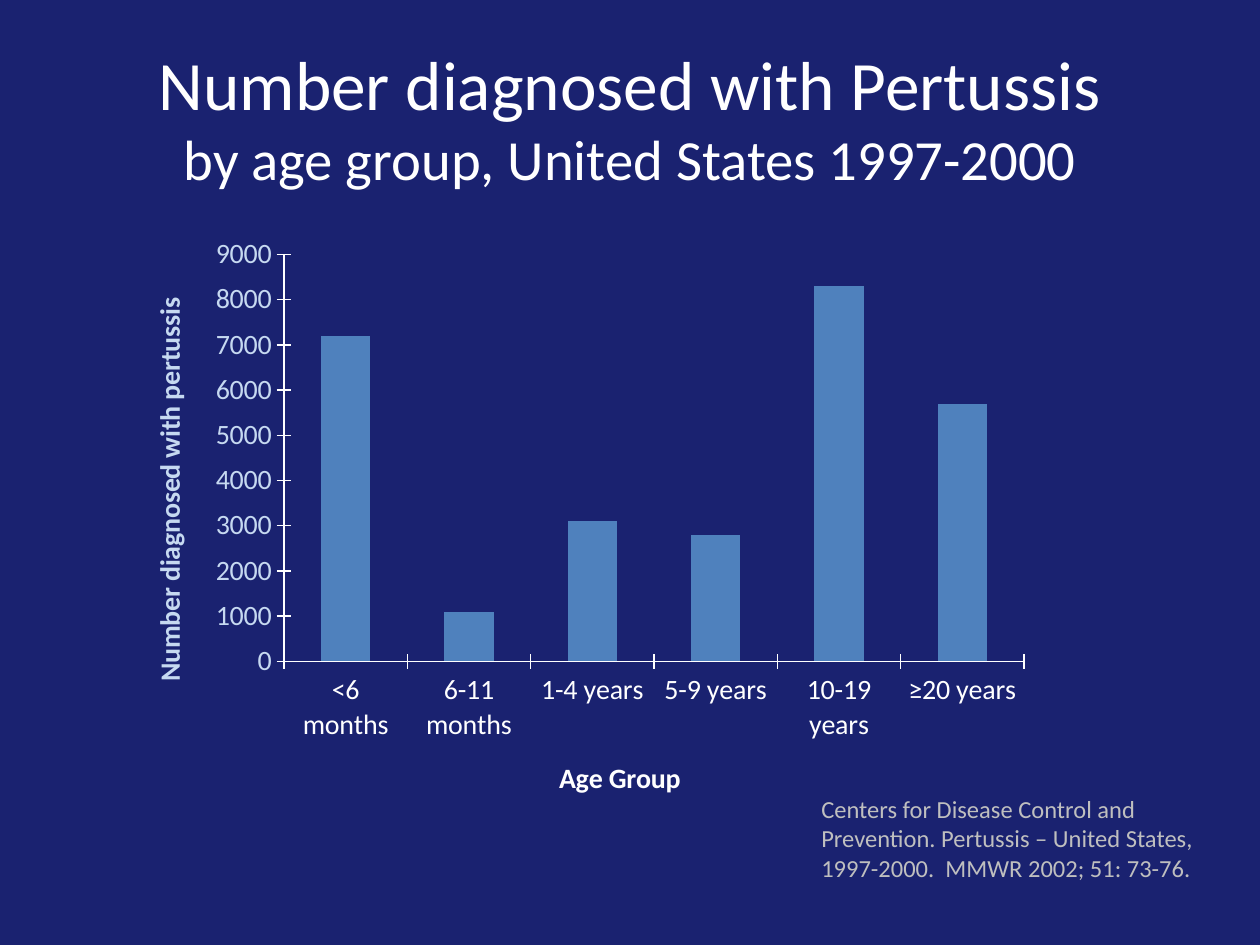
import pptx
import pptx.chart.data
import pptx.dml.color
import pptx.enum.chart
import pptx.enum.text
import pptx.oxml
import pptx.oxml.ns
import pptx.util

COLORS = {"background": "1A2270", "white": "FFFFFF", "pale": "C6D9F1",
          "bar": "4F81BD", "citation": "BFBFBF"}
FONT = "Calibri"
TITLE_LINES = [("Number diagnosed with Pertussis", 39.6),
               ("by age group, United States 1997-2000", 32.4)]
CASES = {"<6 months": 7200, "6-11 months": 1100, "1-4 years": 3100,
         "5-9 years": 2800, "10-19 years": 8300, "≥20 years": 5700}
CITATION = ("Centers for Disease Control and Prevention. Pertussis – United States, "
            "1997-2000.  MMWR 2002; 51: 73-76.")
PLOT_SHARES = {"x": 0.15, "y": 0.04, "w": 0.75, "h": 0.68}


def inches(*lengths):
    return [pptx.util.Inches(length) for length in lengths]


def rgb(name):
    return pptx.dml.color.RGBColor.from_string(COLORS[name])


def style(font, size=16, color="white", bold=False):
    font.name, font.size, font.bold = FONT, pptx.util.Pt(size), bold
    font.color.rgb = rgb(color)


def write(paragraph, text, **look):
    run = paragraph.add_run()
    run.text = text
    style(run.font, **look)


def format_axis(axis, title, color):
    axis.has_major_gridlines = False
    axis.major_tick_mark = pptx.enum.chart.XL_TICK_MARK.CROSS
    axis.format.line.color.rgb = rgb("white")
    style(axis.tick_labels.font, color=color)
    write(axis.axis_title.text_frame.paragraphs[0], title, color=color, bold=True)


def place_plot(chart, shares):
    """Fix the inner plot area at the given shares of the chart."""
    modes = "".join(f'<c:{side}Mode val="edge"/>' for side in "xy")
    sizes = "".join(f'<c:{side} val="{share}"/>' for side, share in shares.items())
    layout = pptx.oxml.parse_xml(
        f'<c:layout {pptx.oxml.ns.nsdecls("c")}><c:manualLayout>'
        f'<c:layoutTarget val="inner"/>{modes}{sizes}</c:manualLayout></c:layout>')
    plot_area = chart.plots[0]._element.getparent()
    for automatic in plot_area.findall(pptx.oxml.ns.qn("c:layout")):
        plot_area.remove(automatic)
    plot_area.insert(0, layout)


def add_title(slide):
    title = slide.shapes.title
    title.left, title.top, title.width, title.height = inches(0.5, 0.3, 9, 1.25)
    frame = title.text_frame
    frame.auto_size = pptx.enum.text.MSO_AUTO_SIZE.NONE
    frame.vertical_anchor = pptx.enum.text.MSO_ANCHOR.MIDDLE
    heading = frame.paragraphs[0]
    heading.alignment = pptx.enum.text.PP_ALIGN.CENTER
    for number, (line, size) in enumerate(TITLE_LINES):
        if number:
            heading.add_line_break()
        write(heading, line, size=size)


def add_case_chart(slide):
    data = pptx.chart.data.CategoryChartData()
    data.categories = list(CASES)
    data.add_series("Series 1", list(CASES.values()))
    chart = slide.shapes.add_chart(
        pptx.enum.chart.XL_CHART_TYPE.COLUMN_CLUSTERED,
        *inches(1.08, 1.83, 7.83, 4.75), data).chart
    chart.has_title = chart.has_legend = False
    style(chart.font)
    columns = chart.plots[0]
    columns.gap_width = 150
    columns.vary_by_categories = False
    fill = columns.series[0].format.fill
    fill.solid()
    fill.fore_color.rgb = rgb("bar")
    format_axis(chart.category_axis, "Age Group", "white")
    format_axis(chart.value_axis, "Number diagnosed with pertussis", "pale")
    chart.value_axis.minimum_scale = 0
    chart.value_axis.maximum_scale = 9000
    chart.value_axis.major_unit = 1000
    place_plot(chart, PLOT_SHARES)


def add_citation(slide):
    frame = slide.shapes.add_textbox(*inches(6.42, 6.25, 3.44, 0.81)).text_frame
    frame.word_wrap = True
    frame.auto_size = pptx.enum.text.MSO_AUTO_SIZE.SHAPE_TO_FIT_TEXT
    write(frame.paragraphs[0], CITATION, size=14, color="citation")


def main():
    deck = pptx.Presentation()
    deck.slide_width, deck.slide_height = inches(10, 7.5)
    slide = deck.slides.add_slide(deck.slide_layouts.get_by_name("Title Only"))
    slide.background.fill.solid()
    slide.background.fill.fore_color.rgb = rgb("background")
    add_title(slide)
    add_case_chart(slide)
    add_citation(slide)
    deck.save("out.pptx")


if __name__ == "__main__":
    main()
